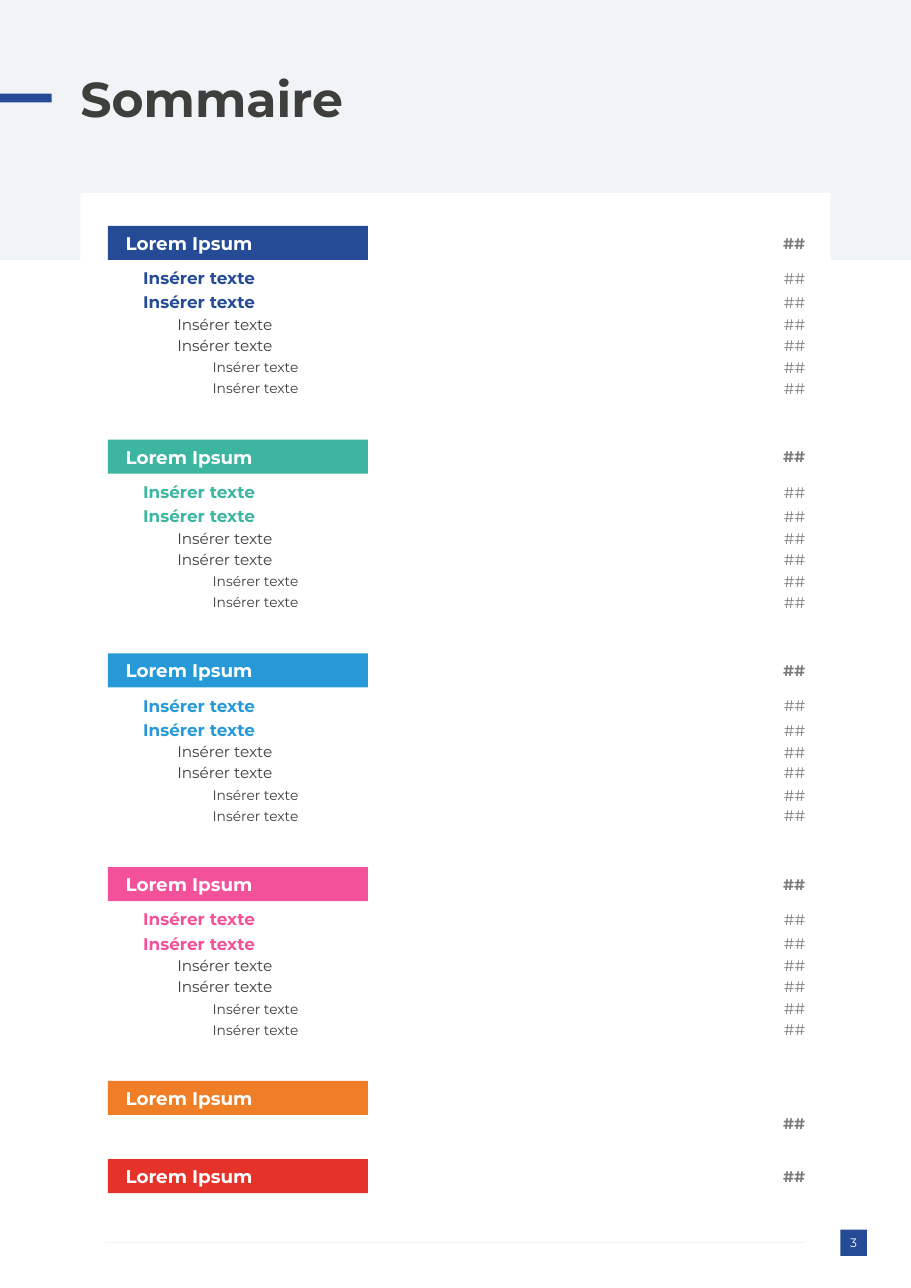
from dataclasses import dataclass

from pptx import Presentation
from pptx.dml.color import RGBColor
from pptx.enum.shapes import MSO_CONNECTOR, MSO_SHAPE
from pptx.enum.text import MSO_ANCHOR, MSO_AUTO_SIZE, PP_ALIGN
from pptx.oxml.xmlchemy import OxmlElement
from pptx.util import Inches, Pt


@dataclass(frozen=True)
class Theme:
    font: str = "Montserrat"
    blue: str = "254A96"
    pale: str = "F1F4F6"
    white: str = "FFFFFF"
    dark: str = "3E3E3C"
    grey: str = "797978"
    sections: tuple = ("254A96", "3CB5A1", "2699D6", "F4519B", "F07E26", "E6332A")
    title_size: float = 32
    heading_size: float = 12
    number_size: float = 10
    page_size: float = 8


@dataclass(frozen=True)
class Box:
    """A rectangle in inches."""
    left: float
    top: float
    width: float
    height: float

    @property
    def right(self):
        return self.left + self.width

    @property
    def middle(self):
        return self.top + self.height / 2

    def emu(self):
        return [Inches(value) for value in (self.left, self.top, self.width, self.height)]


@dataclass(frozen=True)
class Level:
    indent: float
    size: float
    height: float
    bold: bool = False


THEME = Theme()
PAGE = Box(0, 0, 8.27, 11.69)
CARD = Box(0.73, 1.75, 6.81, 1.18)
CONTENTS = Box(0.98, 2.05, 6.33, 8.78)
SECTION_PITCH = 1.94
LAST_SECTION_TOP = 10.52
HEADING_WIDTH, HEADING_HEIGHT = 2.36, 0.31
NUMBER_WIDTH, NUMBER_HEIGHT = 0.4, 0.17
ENTRY_RIGHT = 6.28

TOPIC = Level(0.32, 11, 0.19, bold=True)
SUBTOPIC = Level(0.63, 10, 0.17)
DETAIL = Level(0.95, 9, 0.15)
# Each entry's level and its distance below the top of the section
ENTRIES = ((TOPIC, 0.38), (TOPIC, 0.6), (SUBTOPIC, 0.81),
           (SUBTOPIC, 1.0), (DETAIL, 1.21), (DETAIL, 1.4))


def write(shape, text, size, color, bold=False, align=PP_ALIGN.LEFT,
          anchor=MSO_ANCHOR.MIDDLE, inset=0.0):
    frame = shape.text_frame
    frame.auto_size = MSO_AUTO_SIZE.NONE
    frame.word_wrap = True
    frame.vertical_anchor = anchor
    frame.margin_left = Inches(inset)
    frame.margin_top = frame.margin_right = frame.margin_bottom = 0
    paragraph = frame.paragraphs[0]
    paragraph.text = text
    paragraph.alignment = align
    font = paragraph.font
    font.name, font.size, font.bold = THEME.font, Pt(size), bold
    font.color.rgb = RGBColor.from_string(color)


def add_block(slide, box, color):
    block = slide.shapes.add_shape(MSO_SHAPE.RECTANGLE, *box.emu())
    block.shadow.inherit = False
    block.fill.solid()
    block.fill.fore_color.rgb = RGBColor.from_string(color)
    block.line.fill.background()
    return block


def add_text(slide, box, *args, **options):
    write(slide.shapes.add_textbox(*box.emu()), *args, **options)


def add_number(slide, right, middle, bold=False):
    box = Box(right - NUMBER_WIDTH, middle - NUMBER_HEIGHT / 2, NUMBER_WIDTH, NUMBER_HEIGHT)
    add_text(slide, box, "##", THEME.number_size, THEME.grey, bold, PP_ALIGN.RIGHT)


def add_header(slide, page, card):
    add_block(slide, Box(page.left, page.top, page.width, 2.36), THEME.pale)
    add_block(slide, card, THEME.white)
    add_block(slide, Box(page.left, 0.85, 0.47, 0.08), THEME.blue)
    title = slide.shapes.title
    slide.shapes._spTree.append(title._element)  # bring in front of the banner
    title.left, title.top, title.width, title.height = Box(
        card.left, 0.62, card.width, 0.54).emu()
    write(title, "Sommaire", THEME.title_size, THEME.dark, bold=True)


def add_section(slide, box, color, entries=(), number_drop=0.0):
    """Heading bar with its page number, followed by any indented entries."""
    heading = Box(box.left, box.top, HEADING_WIDTH, HEADING_HEIGHT)
    write(add_block(slide, heading, color), "Lorem Ipsum",
          THEME.heading_size, THEME.white, bold=True, inset=0.16)
    add_number(slide, box.right, heading.middle + number_drop, bold=True)
    for level, offset in entries:
        left = box.left + level.indent
        entry = Box(left, box.top + offset, ENTRY_RIGHT - left, level.height)
        add_text(slide, entry, "Insérer texte", level.size,
                 color if level.bold else THEME.dark, level.bold, anchor=MSO_ANCHOR.TOP)
        add_number(slide, box.right, entry.middle)


def add_contents(slide, box):
    last = len(THEME.sections) - 1
    for index, color in enumerate(THEME.sections):
        top = LAST_SECTION_TOP if index == last else box.top + index * SECTION_PITCH
        add_section(slide, Box(box.left, top, box.width, SECTION_PITCH), color,
                    entries=ENTRIES if index < last - 1 else (),
                    number_drop=0.23 if index == last - 1 else 0)


def add_footer(slide, box):
    rule = slide.shapes.add_connector(
        MSO_CONNECTOR.STRAIGHT, Inches(box.left), Inches(box.middle),
        Inches(CONTENTS.right), Inches(box.middle))
    rule.line.color.rgb = RGBColor.from_string(THEME.pale)
    rule.line.width = Pt(0.5)
    rule._element.spPr.append(OxmlElement("a:effectLst"))
    badge = Box(box.right - box.height, box.top, box.height, box.height)
    write(add_block(slide, badge, THEME.blue), "3", THEME.page_size,
          THEME.white, align=PP_ALIGN.CENTER)


def main():
    presentation = Presentation()
    presentation.slide_width = Inches(PAGE.width)
    presentation.slide_height = Inches(PAGE.height)
    slide = presentation.slides.add_slide(presentation.slide_layouts.get_by_name("Title Only"))
    add_header(slide, PAGE, CARD)
    add_contents(slide, CONTENTS)
    add_footer(slide, Box(0.96, 11.16, 6.91, 0.24))
    presentation.save("out.pptx")


if __name__ == "__main__":
    main()
